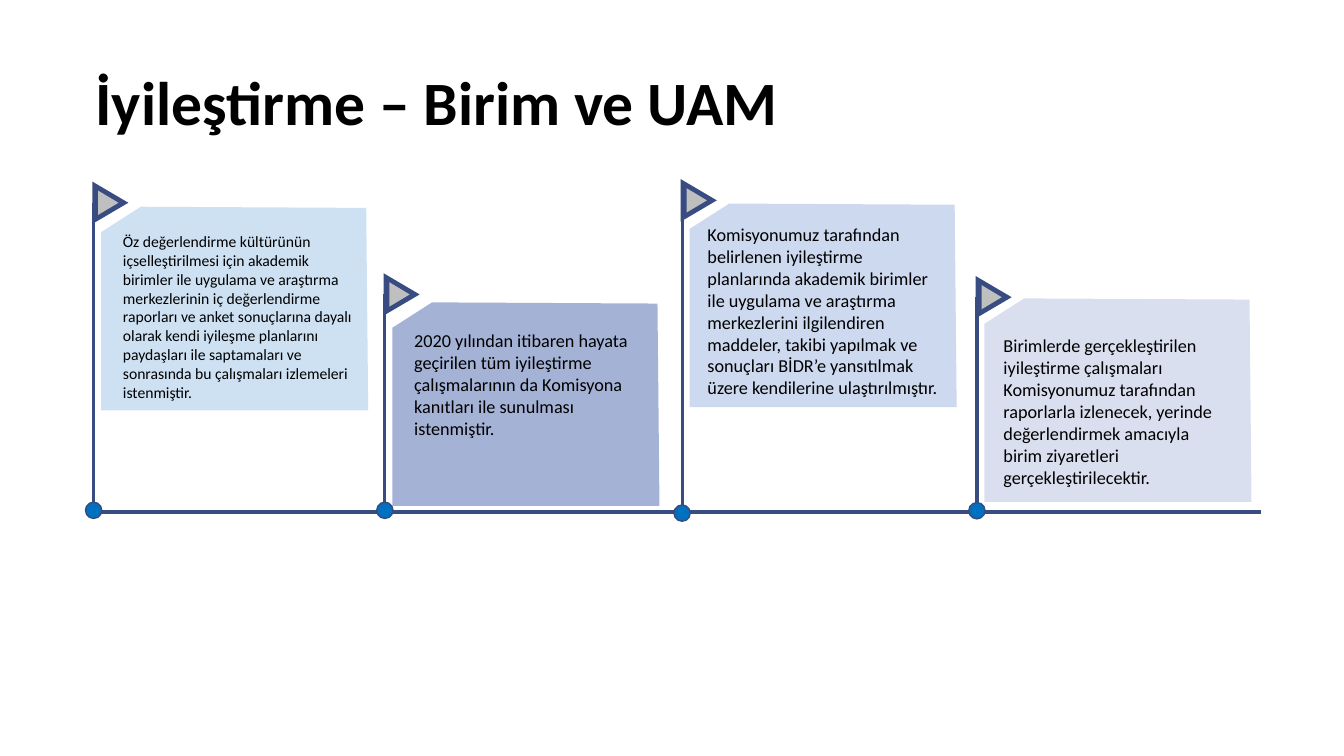
from dataclasses import dataclass
from lxml.etree import SubElement
from pptx import Presentation
from pptx.dml.color import RGBColor
from pptx.enum.shapes import MSO_CONNECTOR as LINE, MSO_SHAPE as SHAPE
from pptx.enum.text import MSO_ANCHOR as ANCHOR
from pptx.oxml.ns import qn
from pptx.util import Cm, Pt

COLORS = {
    "text": "000000",
    "line": "384C81",
    "dot": "0070C0",
    "dot_edge": "374B7F",
    "flag": "BFBFBF",
    "sky": "9EC4E6",
    "indigo": "4A66AC",
    "blue": "9CB4E0",
    "lavender": "B5C1DF",
}
FONT = "Calibri"
CARD_WIDTH, CARD_HEIGHT = 6.73, 5.13
CARD_GAP = 0.19
BASELINE = 12.9


@dataclass
class Stage:
    pole: float
    top: float
    flag: float
    dot: float
    color: str
    text_box: tuple
    size: float
    text: str


STAGES = [
    Stage(2.36, 5.21, 5.11, 12.86, "sky", (0.3, 0.51, 6.4, 4.62), 11.2,
          "Öz değerlendirme kültürünün içselleştirilmesi için akademik birimler ile "
          "uygulama ve araştırma merkezlerinin iç değerlendirme raporları ve anket "
          "sonuçlarına dayalı olarak kendi iyileşme planlarını paydaşları ile "
          "saptamaları ve sonrasında bu çalışmaları izlemeleri istenmiştir."),
    Stage(9.7, 7.62, 7.42, 12.86, "indigo", (0.3, 0.56, 6.1, 3.48), 13,
          "2020 yılından itibaren hayata geçirilen tüm iyileştirme çalışmalarının da "
          "Komisyona kanıtları ile sunulması istenmiştir."),
    Stage(17.19, 5.13, 5.05, 12.93, "blue", (0.2, 0.38, 6.53, 5.13), 13,
          "Komisyonumuz tarafından belirlenen iyileştirme planlarında akademik "
          "birimler ile uygulama ve araştırma merkezlerini ilgilendiren maddeler, "
          "takibi yapılmak ve sonuçları BİDR’e yansıtılmak üzere kendilerine "
          "ulaştırılmıştır."),
    Stage(24.62, 7.52, 7.49, 12.87, "lavender", (0.23, 0.79, 6.1, 4.65), 13,
          "Birimlerde gerçekleştirilen iyileştirme çalışmaları Komisyonumuz "
          "tarafından raporlarla izlenecek, yerinde değerlendirmek amacıyla birim "
          "ziyaretleri gerçekleştirilecektir."),
]


def rgb(name):
    return RGBColor.from_string(COLORS[name])


def add_text(slide, box, text, size, bold=False, anchor=ANCHOR.TOP, spacing=None):
    frame = slide.shapes.add_textbox(*map(Cm, box)).text_frame
    frame.word_wrap = True
    frame.vertical_anchor = anchor
    paragraph = frame.paragraphs[0]
    paragraph.text = text
    paragraph.line_spacing = spacing
    font = paragraph.font
    font.name, font.size, font.bold = FONT, Pt(size), bold
    font.color.rgb = rgb("text")


def paint(shape, fill, edge=None):
    shape.shadow.inherit = False
    shape.fill.solid()
    shape.fill.fore_color.rgb = rgb(fill)
    if edge:
        shape.line.color.rgb = rgb(edge)
        shape.line.width = Pt(1)
    else:
        shape.line.fill.background()


def add_centred(slide, kind, x, y, width, height, fill, edge=None, rotation=0):
    shape = slide.shapes.add_shape(
        kind, Cm(x - width / 2), Cm(y - height / 2), Cm(width), Cm(height))
    shape.rotation = rotation
    paint(shape, fill, edge)


def add_line(slide, x1, y1, x2, y2):
    line = slide.shapes.add_connector(LINE.STRAIGHT, Cm(x1), Cm(y1), Cm(x2), Cm(y2))
    line.line.color.rgb = rgb("line")
    line.line.width = Pt(2.25)
    SubElement(line._element.spPr, qn("a:effectLst"))


def add_card(slide, left, top, width, height, color):
    corners = [(width - 0.05, 0.03), (1, 0), (0, 0.64), (0, height), (width, height)]
    points = [(Cm(left + x), Cm(top + y)) for x, y in corners]
    builder = slide.shapes.build_freeform(*points[0])
    builder.add_line_segments(points[1:], close=True)
    card = builder.convert_to_shape()
    paint(card, color)
    tint = card._element.spPr.find(qn("a:solidFill"))[0]
    SubElement(tint, qn("a:alpha")).set("val", "50000")


def add_stage(slide, stage):
    left = stage.pole + CARD_GAP
    add_card(slide, left, stage.top, CARD_WIDTH, CARD_HEIGHT, stage.color)
    dx, dy, width, height = stage.text_box
    add_text(slide, (left + dx, stage.top + dy, width, height), stage.text, stage.size)
    add_line(slide, stage.pole, stage.flag, stage.pole, BASELINE)
    add_centred(slide, SHAPE.OVAL, stage.pole, stage.dot, 0.41, 0.41, "dot", "dot_edge")
    for offset, width, height, color in ((0.42, 1.07, 0.91, "line"),
                                         (0.37, 0.61, 0.51, "flag")):
        add_centred(slide, SHAPE.ISOSCELES_TRIANGLE, stage.pole + offset, stage.flag,
                    width, height, color, rotation=90)


def main():
    deck = Presentation()
    deck.slide_width, deck.slide_height = Cm(33.87), Cm(19.05)
    slide = deck.slides.add_slide(deck.slide_layouts[6])
    add_text(slide, (2.16, 0.81, 29.21, 3.68), "İyileştirme – Birim ve UAM", 44,
             bold=True, anchor=ANCHOR.MIDDLE, spacing=0.9)
    add_line(slide, STAGES[0].pole, BASELINE, 31.78, BASELINE)
    for stage in STAGES:
        add_stage(slide, stage)
    deck.save("out.pptx")


if __name__ == "__main__":
    main()
